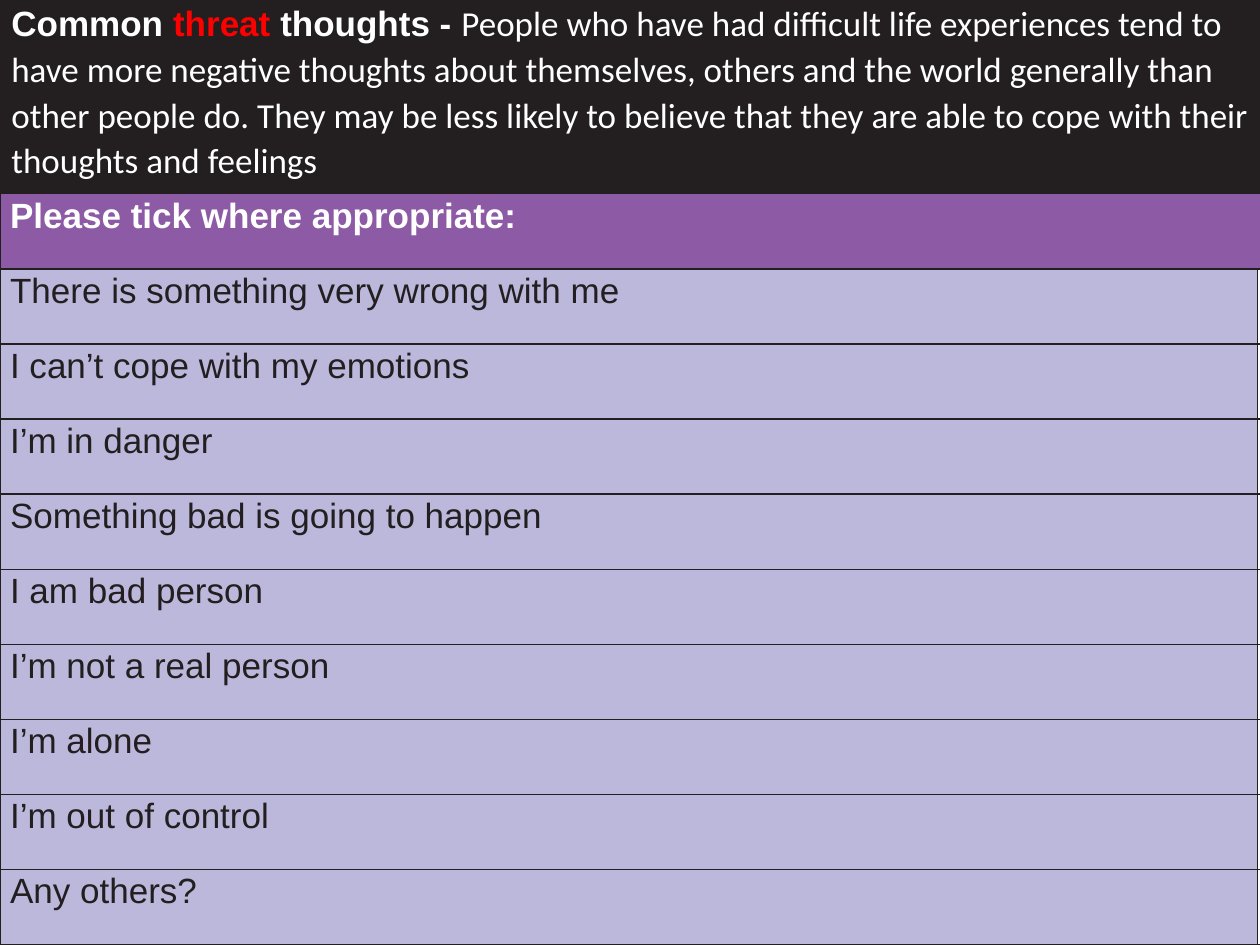
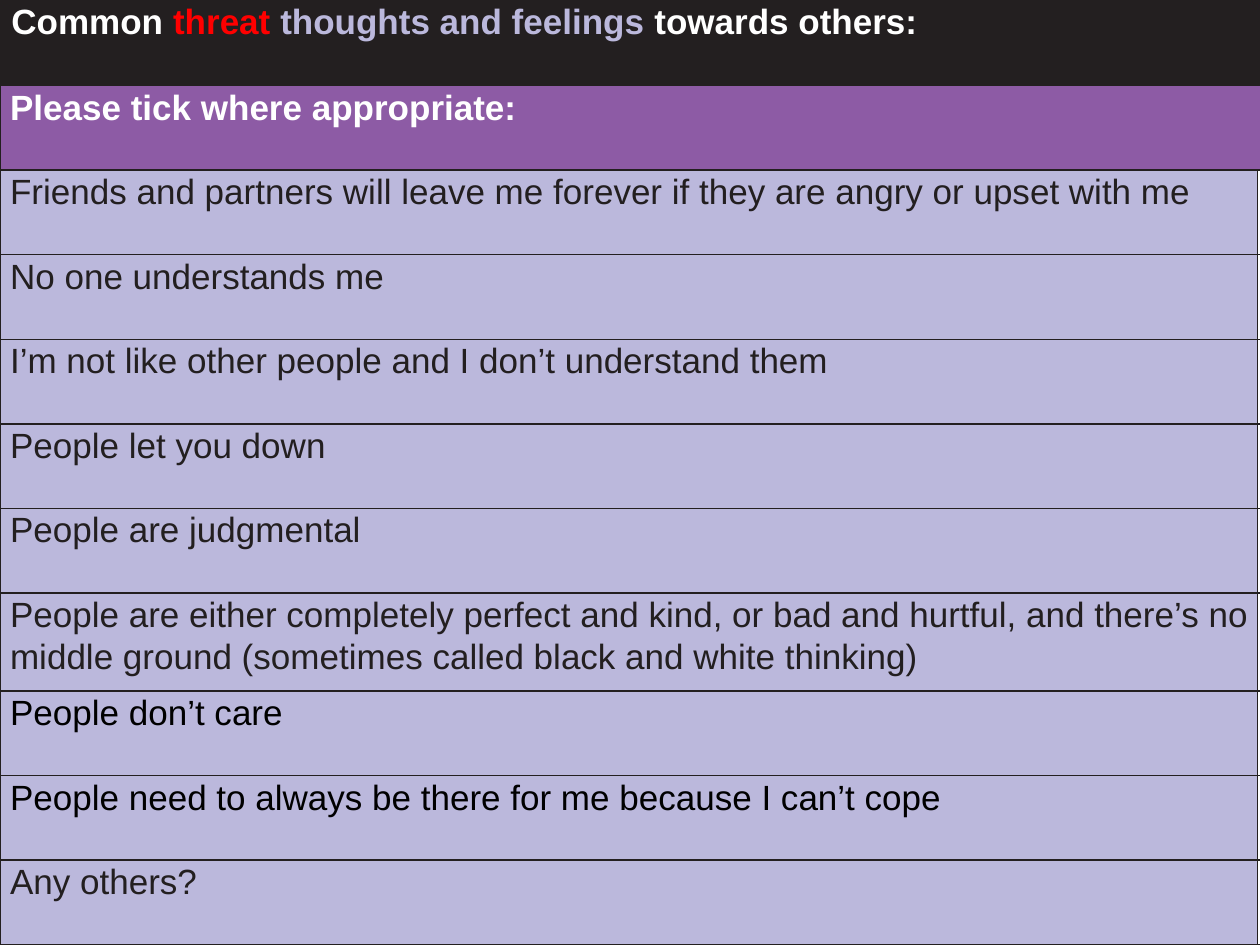
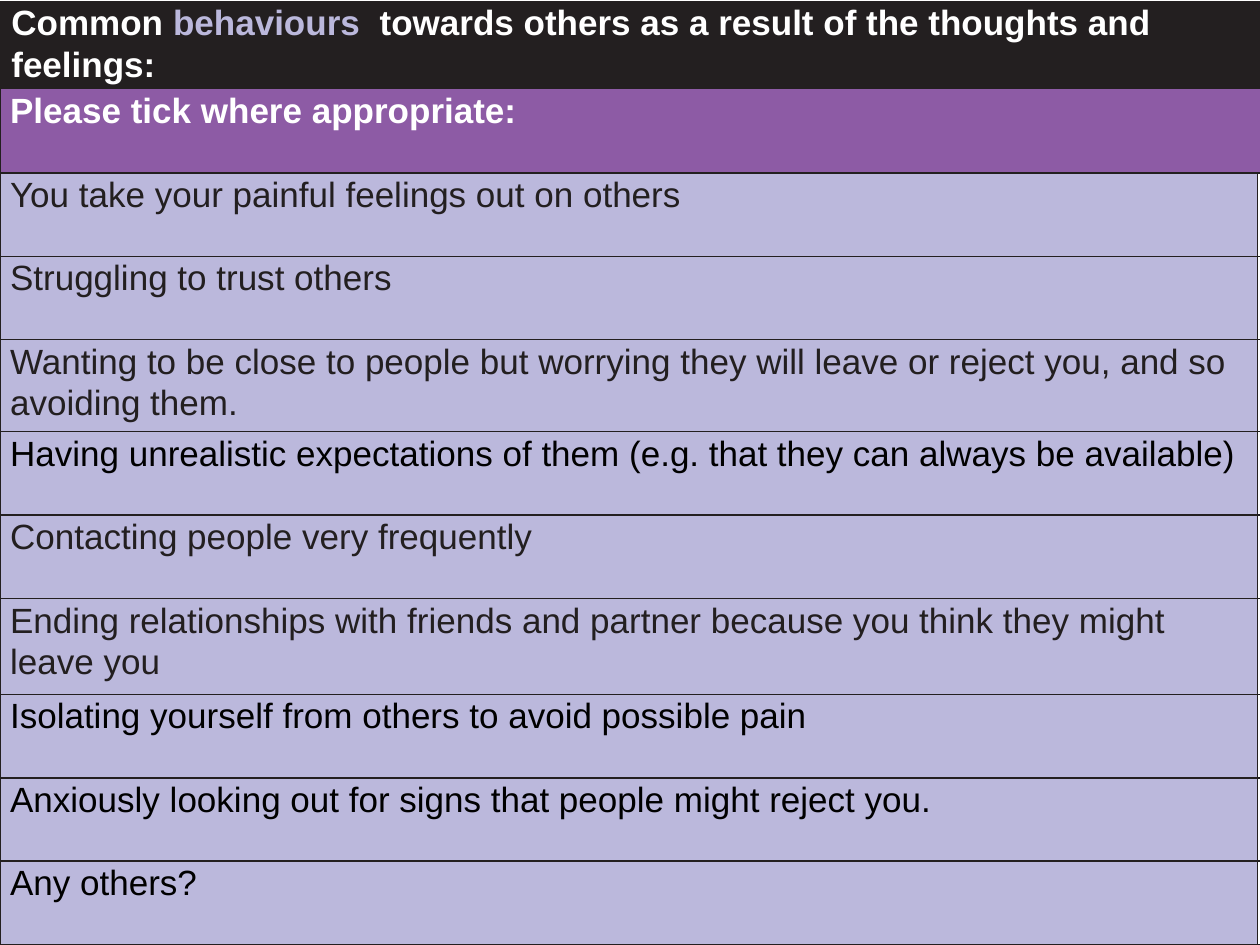
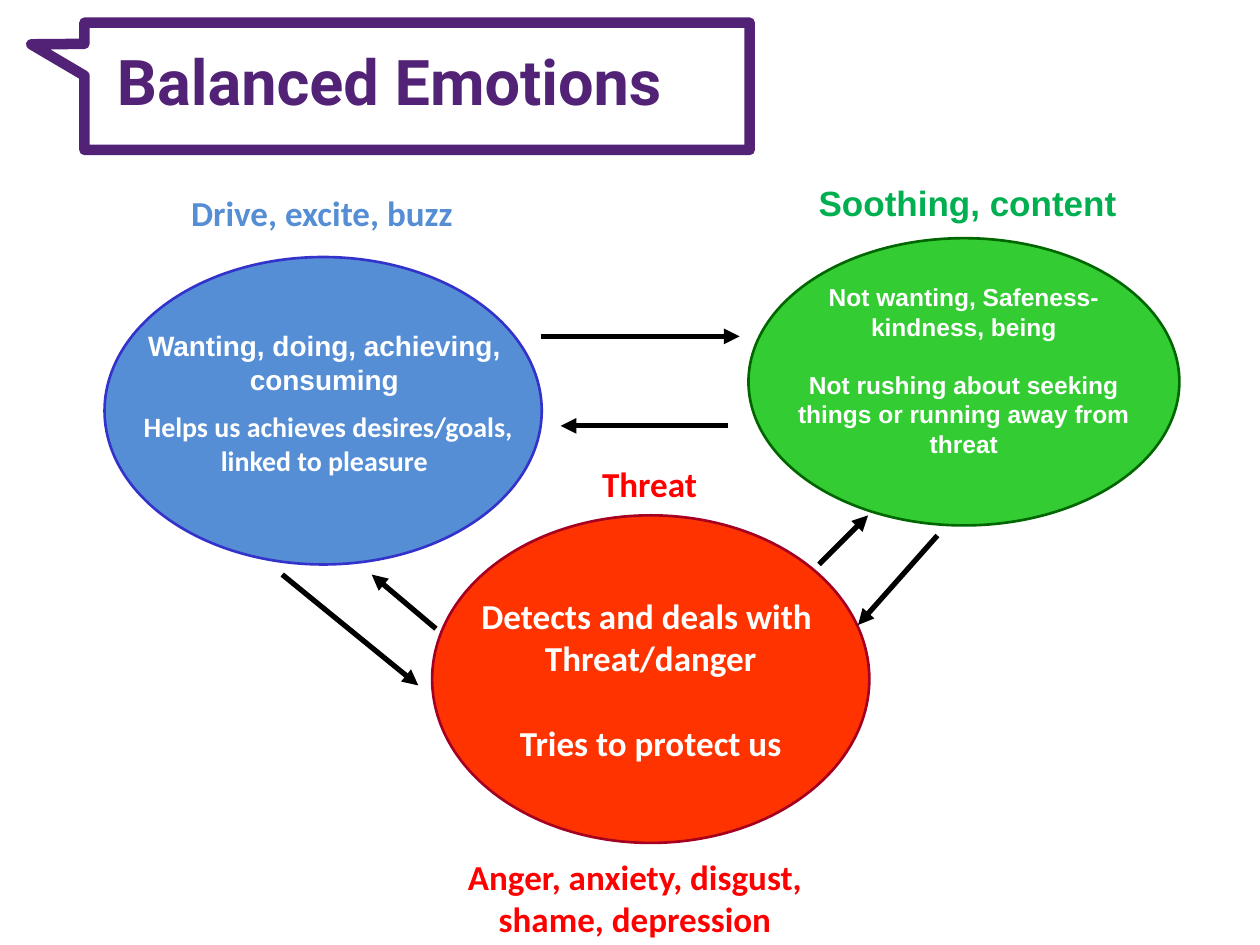
import pptx
import pptx.util
import pptx.dml.color
import pptx.enum.shapes
import pptx.enum.text
import pptx.oxml
import pptx.oxml.ns
from pptx.util import Inches

COLOURS = {
    "ink": "231F20",
    "header": "8D5BA5",
    "lilac": "BBB8DC",
    "white": "FFFFFF",
    "black": "000000",
    "red": "FF0000",
    "title": "512275",
    "drive": "558ED5",
    "drive_edge": "3333CC",
    "soothe": "33CC33",
    "soothe_edge": "006600",
    "soothe_label": "00B050",
    "threat": "FF3300",
    "threat_edge": "A50021",
}
SLIDE_WIDTH, SLIDE_HEIGHT = 10, 7.5
STATEMENT_WIDTH, TICK_WIDTH = 9.98, 0.03
SHAPES = pptx.enum.shapes.MSO_SHAPE
ALIGN = pptx.enum.text.PP_ALIGN
ANCHOR = pptx.enum.text.MSO_ANCHOR

# Each checklist: title runs (text, colour, font, bold), statements,
# rows with their own height, and statements set in black
CHECKLISTS = [
    {
        "top": 0,
        "title": [
            ("Common ", "white", "Arial", True),
            ("threat ", "red", "Arial", True),
            ("thoughts - ", "white", "Arial", True),
            ("People who have had difficult life experiences tend to have more "
             "negative thoughts about themselves, others and the world generally "
             "than other people do. They may be less likely to believe that they "
             "are able to cope with their thoughts and feelings",
             "white", "Calibri", False),
        ],
        "statements": [
            "There is something very wrong with me",
            "I can’t cope with my emotions",
            "I’m in danger",
            "Something bad is going to happen",
            "I am bad person",
            "I’m not a real person",
            "I’m alone",
            "I’m out of control",
            "Any others?",
        ],
        "heights": {0: 1.54},
        "black": [],
    },
    {
        "top": 0,
        "title": [
            ("Common ", "white", "Arial", True),
            ("threat ", "red", "Arial", True),
            ("thoughts and feelings ", "lilac", "Arial", True),
            ("towards others:", "white", "Arial", True),
        ],
        "statements": [
            "Friends and partners will leave me forever if they are angry or upset with me",
            "No one understands me",
            "I’m not like other people and I don’t understand them",
            "People let you down",
            "People are judgmental",
            "People are either completely perfect and kind, or bad and hurtful, and "
            "there’s no middle ground (sometimes called black and white thinking)",
            "People don’t care",
            "People need to always be there for me because I can’t cope",
            "Any others?",
        ],
        "heights": {0: 0.68, 7: 0.78},
        "black": [6, 7],
    },
    {
        "top": 0.01,
        "title": [
            ("Common ", "white", "Arial", True),
            ("behaviours ", "lilac", "Arial", True),
            (" towards others as a result of the thoughts and feelings:",
             "white", "Arial", True),
        ],
        "statements": [
            "You take your painful feelings out on others",
            "Struggling to trust others",
            "Wanting to be close to people but worrying they will leave or reject "
            "you, and so avoiding them.",
            "Having unrealistic expectations of them (e.g. that they can always be available)",
            "Contacting people very frequently",
            "Ending relationships with friends and partner because you think they "
            "might leave you",
            "Isolating yourself from others to avoid possible pain",
            "Anxiously looking out for signs that people might reject you.",
            "Any others?",
        ],
        "heights": {0: 0.7, 4: 0.73, 7: 0.76},
        "black": [3, 6, 7, 8],
    },
]


def rgb(colour):
    return pptx.dml.color.RGBColor.from_string(COLOURS[colour])


def box(left, top, width, height):
    return [Inches(length) for length in (left, top, width, height)]


def add_run(paragraph, text, colour, font, size, bold=True):
    run = paragraph.add_run()
    run.text = text
    run.font.name = font
    run.font.size = pptx.util.Pt(size)
    run.font.bold = bold
    run.font.color.rgb = rgb(colour)


def add_xml(parent, xml):
    namespace = pptx.oxml.ns.nsdecls("a")
    parent.append(pptx.oxml.parse_xml(xml.replace("/>", f" {namespace}/>", 1)
                                      if xml.count("<") == 1
                                      else xml.replace(">", f" {namespace}>", 1)))


# Checklist tables

def style_cell(cell, fill, borders):
    cell.margin_left = cell.margin_right = cell.margin_top = cell.margin_bottom = 0
    for side in "LRTB":
        if side in borders:
            line = f'<a:solidFill><a:srgbClr val="{COLOURS["ink"]}"/></a:solidFill>'
        else:
            line = "<a:noFill/>"
        add_xml(cell._tc.get_or_add_tcPr(), f'<a:ln{side} w="12700">{line}</a:ln{side}>')
    if fill:
        cell.fill.solid()
        cell.fill.fore_color.rgb = rgb(fill)
    else:
        cell.fill.background()


def write_cell(cell, runs, indent, space_before):
    paragraph = cell.text_frame.paragraphs[0]
    paragraph.line_spacing = 1.07
    paragraph.space_before = pptx.util.Pt(space_before)
    paragraph._p.get_or_add_pPr().set("marL", str(Inches(indent)))
    for text, colour, font, bold in runs:
        add_run(paragraph, text, colour, font, 20, bold)


def add_checklist(slide, checklist):
    top, heights = checklist["top"], checklist["heights"]
    statements = checklist["statements"]
    row_count = len(statements) + 2
    height = SLIDE_HEIGHT - top
    even_height = (height - sum(heights.values())) / (row_count - len(heights))

    table = slide.shapes.add_table(
        row_count, 2, *box(0, top, STATEMENT_WIDTH + TICK_WIDTH, height)).table
    table.first_row = table.horz_banding = False
    table.columns[0].width = Inches(STATEMENT_WIDTH)
    table.columns[1].width = Inches(TICK_WIDTH)
    for index, row in enumerate(table.rows):
        row.height = Inches(heights.get(index, even_height))

    # Title and header bands run across both columns
    for index, (fill, borders) in enumerate([("ink", ""), ("header", "LRB")]):
        table.cell(index, 0).merge(table.cell(index, 1))
        for cell in table.rows[index].cells:
            style_cell(cell, fill, borders)
    write_cell(table.cell(0, 0), checklist["title"], 0.09, 5)
    write_cell(table.cell(1, 0),
               [("Please tick where appropriate:", "white", "Arial", True)], 0.08, 3.4)

    for index, statement in enumerate(statements):
        statement_cell, tick_cell = table.rows[index + 2].cells
        style_cell(statement_cell, "lilac", "LRTB")
        style_cell(tick_cell, None, "LRTB")
        colour = "black" if index in checklist["black"] else "ink"
        write_cell(statement_cell, [(statement, colour, "Arial", False)], 0.08, 4)


# Balanced emotions diagram

def add_outline(slide, kind, place, fill=None, edge=None, weight=1.5):
    outline = slide.shapes.add_shape(kind, *box(*place))
    outline.shadow.inherit = False
    if fill:
        outline.fill.solid()
        outline.fill.fore_color.rgb = rgb(fill)
    else:
        outline.fill.background()
    if edge:
        outline.line.color.rgb = rgb(edge)
        outline.line.width = pptx.util.Pt(weight)
    else:
        outline.line.fill.background()
    return outline


def write_lines(holder, lines, size, gaps=(), align=ALIGN.CENTER,
                anchor=ANCHOR.TOP, wrap=True):
    """lines: one list of (text, colour, font) per paragraph; gaps: points before each."""
    frame = holder.text_frame
    frame.word_wrap = wrap
    frame.vertical_anchor = anchor
    for index, runs in enumerate(lines):
        paragraph = frame.paragraphs[0] if index == 0 else frame.add_paragraph()
        paragraph.alignment = align
        if index < len(gaps):
            paragraph.space_before = pptx.util.Pt(gaps[index])
        for text, colour, font in runs:
            add_run(paragraph, text, colour, font, size)


def add_text(slide, place, lines, size, **options):
    text = slide.shapes.add_textbox(*box(*place))
    write_lines(text, lines, size, **options)
    return text


def add_label(slide, place, text, colour, font="Calibri"):
    label = add_outline(slide, SHAPES.RECTANGLE, place, "white")
    write_lines(label, [[(text, colour, font)]], 20)


def add_arrow(slide, start, end):
    arrow = slide.shapes.add_connector(
        pptx.enum.shapes.MSO_CONNECTOR.STRAIGHT, *box(*start, *end))
    arrow.line.color.rgb = rgb("black")
    arrow.line.width = pptx.util.Pt(3)
    add_xml(arrow.line._get_or_add_ln(), '<a:tailEnd type="triangle"/>')
    add_xml(arrow._element.spPr, "<a:effectLst/>")


def add_balance(slide):
    add_label(slide, (3.58, 3.62, 3.15, 0.44), "Threat", "red")
    add_text(slide, (0.83, 0.19, 8.98, 0.89),
             [[("Balanced Emotions", "title", "Roboto")]], 36,
             align=ALIGN.LEFT, anchor=ANCHOR.MIDDLE)

    # Soothing system
    add_outline(slide, SHAPES.OVAL, (5.94, 1.89, 3.42, 2.28), "soothe", "soothe_edge")
    soothing = add_text(
        slide, (6.1, 1.96, 3.1, 1.75),
        [[("Not wanting, Safeness-kindness, being", "white", "Arial")],
         [("Not rushing about seeking things or running away from threat",
           "white", "Arial")]],
        14, gaps=(0, 16.5))
    soothing.text_frame.margin_top = Inches(0.28)

    # Threat system
    threat = add_outline(slide, SHAPES.OVAL, (3.43, 4.09, 3.47, 2.6),
                         "threat", "threat_edge")
    write_lines(threat,
                [[(line, "white", "Calibri")] for line in
                 ("Detects and deals with ", "Threat/danger", "Tries to protect us")],
                20, gaps=(0, 0, 24.4), anchor=ANCHOR.MIDDLE, wrap=False)

    # Arrows between the systems
    for start, end in [
        ((4.29, 2.67), (5.87, 2.67)),
        ((5.78, 3.38), (4.45, 3.38)),
        ((2.24, 4.56), (3.32, 5.44)),
        ((3.46, 4.99), (2.95, 4.56)),
        ((7.44, 4.25), (6.81, 4.96)),
        ((6.5, 4.48), (6.89, 4.09)),
    ]:
        add_arrow(slide, start, end)

    # Drive system
    add_outline(slide, SHAPES.OVAL, (0.83, 2.04, 3.47, 2.44), "drive", "drive_edge")
    add_text(slide, (0.96, 2.56, 3.23, 1.31),
             [[("Wanting, doing, achieving, consuming", "white", "Arial")],
              [(" ", "white", "Arial"),
               ("Helps us achieves desires/goals, linked to pleasure",
                "white", "Calibri")]],
             16, gaps=(8, 8))

    # Feelings beside each system
    add_label(slide, (0.98, 1.47, 3.15, 0.44), "Drive, excite, buzz", "drive")
    add_label(slide, (5.71, 1.39, 3.94, 0.44), "Soothing, content",
              "soothe_label", "Arial")
    add_label(slide, (3.19, 6.74, 3.7, 0.77),
              "Anger, anxiety, disgust, shame, depression", "red")

    # Speech frame around the title
    speech = add_outline(slide, SHAPES.RECTANGULAR_CALLOUT, (0.67, 0.18, 5.28, 1.01),
                         edge="title", weight=6)
    speech.adjustments[0] = -0.58
    speech.adjustments[1] = -0.33


def main():
    deck = pptx.Presentation()
    deck.slide_width = Inches(SLIDE_WIDTH)
    deck.slide_height = Inches(SLIDE_HEIGHT)
    blank = deck.slide_layouts[6]
    for checklist in CHECKLISTS:
        add_checklist(deck.slides.add_slide(blank), checklist)
    add_balance(deck.slides.add_slide(blank))
    deck.save("out.pptx")


if __name__ == "__main__":
    main()
